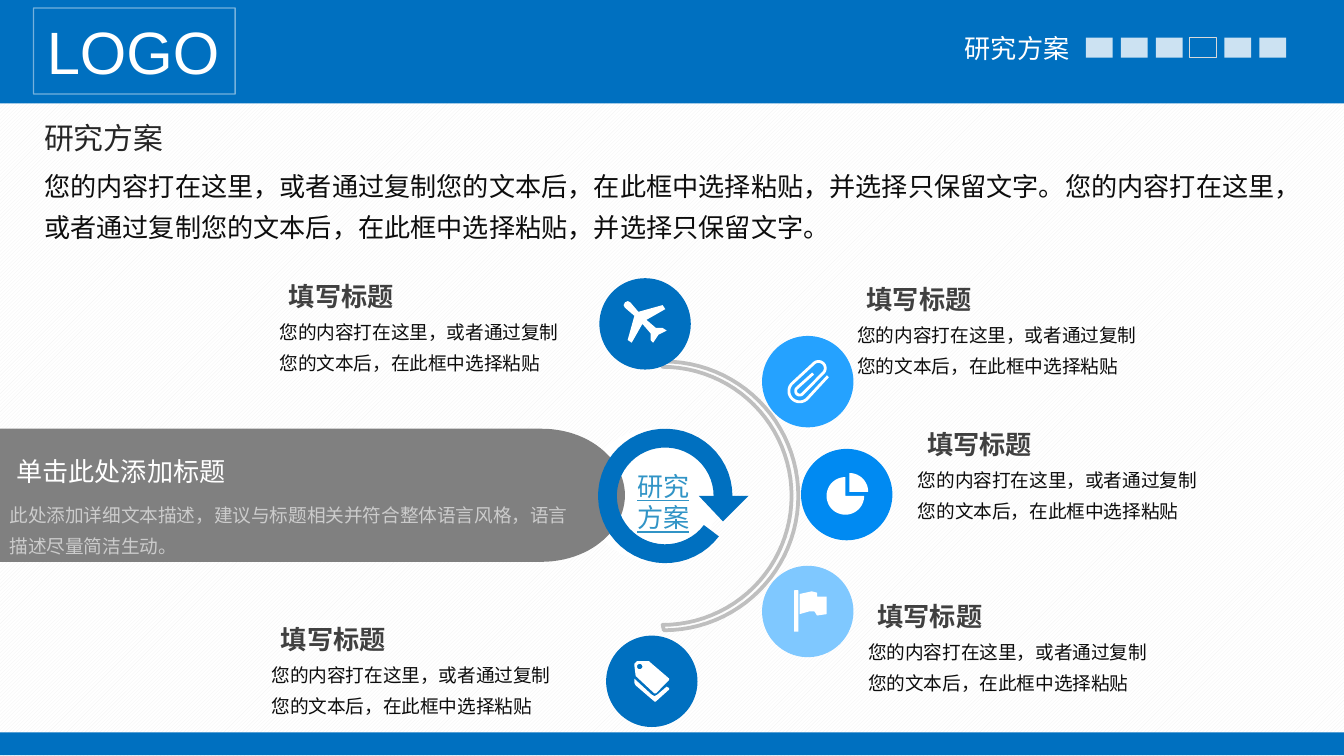
from math import cos, radians, sin

from lxml.etree import SubElement
from pptx import Presentation
from pptx.dml.color import RGBColor
from pptx.enum.dml import MSO_PATTERN
from pptx.enum.shapes import MSO_SHAPE
from pptx.enum.text import MSO_AUTO_SIZE, PP_ALIGN
from pptx.oxml.ns import qn
from pptx.util import Pt

PX = 9144  # EMU per px, 100 px to the inch
BLUE, WHITE, INK = "0070C0", "FFFFFF", "0D0D0D"
TOPIC = "研究方案"
SENTENCE = "您的内容打在这里，或者通过复制您的文本后，在此框中选择粘贴"


def emu(px):
    return round(px * PX)


def color(value):
    return RGBColor.from_string(value)


def set_alpha(element, percent):
    for tint in element.iter(qn("a:srgbClr")):
        SubElement(tint, qn("a:alpha"), val=str(percent * 1000))


def arc(cx, cy, rx, ry, start, end, steps=48):
    """Points on an ellipse; degrees run clockwise from the right."""
    angles = [radians(start + (end - start) * i / steps) for i in range(steps + 1)]
    return [(cx + rx * cos(a), cy + ry * sin(a)) for a in angles]


class Deck:
    font = "Arial"

    def __init__(self, width):
        self.file = Presentation()
        self.file.slide_width = emu(width)
        self.file.slide_height = emu(width * 9 / 16)
        self.slide = self.file.slides.add_slide(self.file.slide_layouts[6])
        pattern = self.slide.background.fill
        pattern.patterned()
        pattern.pattern = MSO_PATTERN.LIGHT_UPWARD_DIAGONAL
        pattern.fore_color.rgb, pattern.back_color.rgb = color("F2F2F2"), color(WHITE)

    def paint(self, shape, fill=None, line=None, weight=1, alpha=None):
        shape.shadow.inherit = False
        if fill:
            shape.fill.solid()
            shape.fill.fore_color.rgb = color(fill)
        else:
            shape.fill.background()
        if line:
            shape.line.color.rgb = color(line)
            shape.line.width = Pt(weight)
        else:
            shape.line.fill.background()
        if alpha:
            set_alpha(shape._element.spPr, alpha)
        return shape

    def preset(self, kind, x, y, w, h, **style):
        shape = self.slide.shapes.add_shape(kind, emu(x), emu(y), emu(w), emu(h))
        return self.paint(shape, **style)

    def rect(self, x, y, w, h, **style):
        return self.preset(MSO_SHAPE.RECTANGLE, x, y, w, h, **style)

    def disc(self, x, y, size, fill):
        return self.preset(MSO_SHAPE.OVAL, x, y, size, size, fill=fill)

    def outline(self, *contours, closed=True, **style):
        scaled = [[(emu(x), emu(y)) for x, y in contour] for contour in contours]
        builder = self.slide.shapes.build_freeform(*scaled[0][0], scale=1.0)
        for index, points in enumerate(scaled):
            if index:
                builder.move_to(*points[0])
            builder.add_line_segments(points[1:], close=closed)
        return self.paint(builder.convert_to_shape(), **style)

    def text(self, x, y, w, h, words, size, ink, inset=(10, 5), wrap=True, spacing=None,
             bold=None, underline=None, align=None, alpha=None):
        box = self.slide.shapes.add_textbox(emu(x), emu(y), emu(w), emu(h))
        frame = box.text_frame
        frame.word_wrap = wrap
        frame.auto_size = MSO_AUTO_SIZE.SHAPE_TO_FIT_TEXT
        frame.margin_left = frame.margin_right = emu(inset[0])
        frame.margin_top = frame.margin_bottom = emu(inset[1])
        paragraph = frame.paragraphs[0]
        paragraph.text = words
        paragraph.line_spacing, paragraph.alignment = spacing, align
        font = paragraph.font
        font.name, font.size, font.bold, font.underline = self.font, Pt(size), bold, underline
        font.color.rgb = color(ink)
        if alpha:
            set_alpha(paragraph._p, alpha)
        return box

    def callout(self, x, y):
        self.text(x, y, 226, 33, "填写标题", 14, "404040", (5, 5), spacing=Pt(16), bold=True)
        self.text(x - 2, y + 27, 216, 47, SENTENCE, 10, INK, (0, 0), spacing=1.4)


deck = Deck(1000)

# Header and footer bars
deck.rect(0, 0, 1000, 77, fill=BLUE)
deck.rect(0, 545, 1000, 17, fill=BLUE)

# Introduction
deck.text(23, 84, 110, 37, TOPIC, 16, "262626", wrap=False)
deck.text(23, 115, 942, 72, f"{SENTENCE}，并选择只保留文字。" * 2, 14, INK, spacing=1.3)

# Section marker: the fourth of six steps is open
deck.text(708, 19, 100, 34, TOPIC, 14, WHITE, wrap=False)
for step in range(6):
    marker = dict(line="D9D9D9", weight=0.5) if step == 3 else dict(fill=WHITE, alpha=80)
    deck.rect(round(808 + 25.8 * step), 28, 20, 15, **marker)

# Placeholder for the emblem
emblem = deck.text(25, 6, 150, 64, "LOGO", 32, WHITE, wrap=False)
deck.paint(emblem, line=WHITE, weight=0.75, alpha=46)

# Half ring that links the topics
deck.outline(arc(494, 369, 100, 100, -90, 90) + arc(493, 369, 96, 96, 90, -90),
             line="BFBFBF", weight=2)
deck.disc(436, 319, 99, WHITE)

# Topic discs
for x, y, fill in [(446, 207, BLUE), (596, 334, "008AF2"), (567, 421, "7FC8FF"),
                   (567, 250, "25A2FF"), (451, 473, BLUE)]:
    deck.disc(x, y, 68, fill)

# Plane icon
deck.outline([(493, 244), (488, 244), (481, 238), (495, 230), (493, 227), (475, 232),
              (469, 225), (467, 224), (465, 225), (464, 227), (465, 229), (472, 235),
              (467, 253), (470, 255), (478, 241), (484, 248), (484, 253), (486, 255),
              (490, 249), (496, 246)], fill=WHITE)

# Pie icon
deck.outline([(629, 369)] + arc(629, 369, 14, 14, 270, 0), fill=WHITE)
deck.outline([(632, 366)] + arc(632, 366, 14, 14, -90, 0), fill=WHITE)

# Flag icon
deck.outline([(615, 444), (608, 444), (608, 441), (604, 440), (595, 442), (595, 457),
              (602, 455), (606, 455), (608, 458), (615, 457), (615, 449)], fill=WHITE)
deck.preset(MSO_SHAPE.ROUND_2_SAME_RECTANGLE, 591, 439, 3, 31, fill=WHITE)

# Paper clip icon
deck.outline([(605, 278)] + arc(595, 291, 3, 3, 225, 45) + arc(609, 274, 5, 5, 45, -135)
             + arc(595, 291, 8, 8, 225, 45) + [(616, 280)],
             closed=False, line=WHITE, weight=1.5)

# Tag icon
deck.outline([(487, 518), (485, 517), (472, 505), (472, 508), (473, 510), (487, 522),
              (488, 522), (498, 513), (498, 512), (496, 511), (489, 517)], fill=WHITE)
deck.outline([(484, 493), (483, 492), (475, 492), (474, 492), (472, 494), (472, 495),
              (473, 503), (487, 516), (488, 516), (498, 506), (498, 505)],
             arc(476, 496, 2, 2, 0, 360), fill=WHITE)

# Banner
deck.outline([(0, 418), (0, 319)] + arc(403, 368.5, 62, 49.5, -90, 90), fill="808080")
deck.text(7, 334, 341, 34, "单击此处添加标题", 14, WHITE, (5, 5))
deck.text(7, 368, 428, 47, "此处添加详细文本描述，建议与标题相关并符合整体语言风格，语言描述尽量简洁生动。",
          10, WHITE, (0, 0), spacing=1.4, alpha=60)

# Topic texts
for x, y in [(210, 205), (640, 207), (685, 315), (648, 443), (204, 460)]:
    deck.callout(x, y)

# Circular arrow around the hub
deck.outline([(531, 369), (520, 369), (538, 388), (557, 369), (545, 369)]
             + arc(495, 369, 50, 50, 0, -323) + arc(495, 369, 36, 36, -323, 0), fill=BLUE)
deck.text(462, 345, 63, 57, TOPIC, 14, "3194C6", (5, 5), underline=True, align=PP_ALIGN.CENTER)

deck.file.save("out.pptx")
